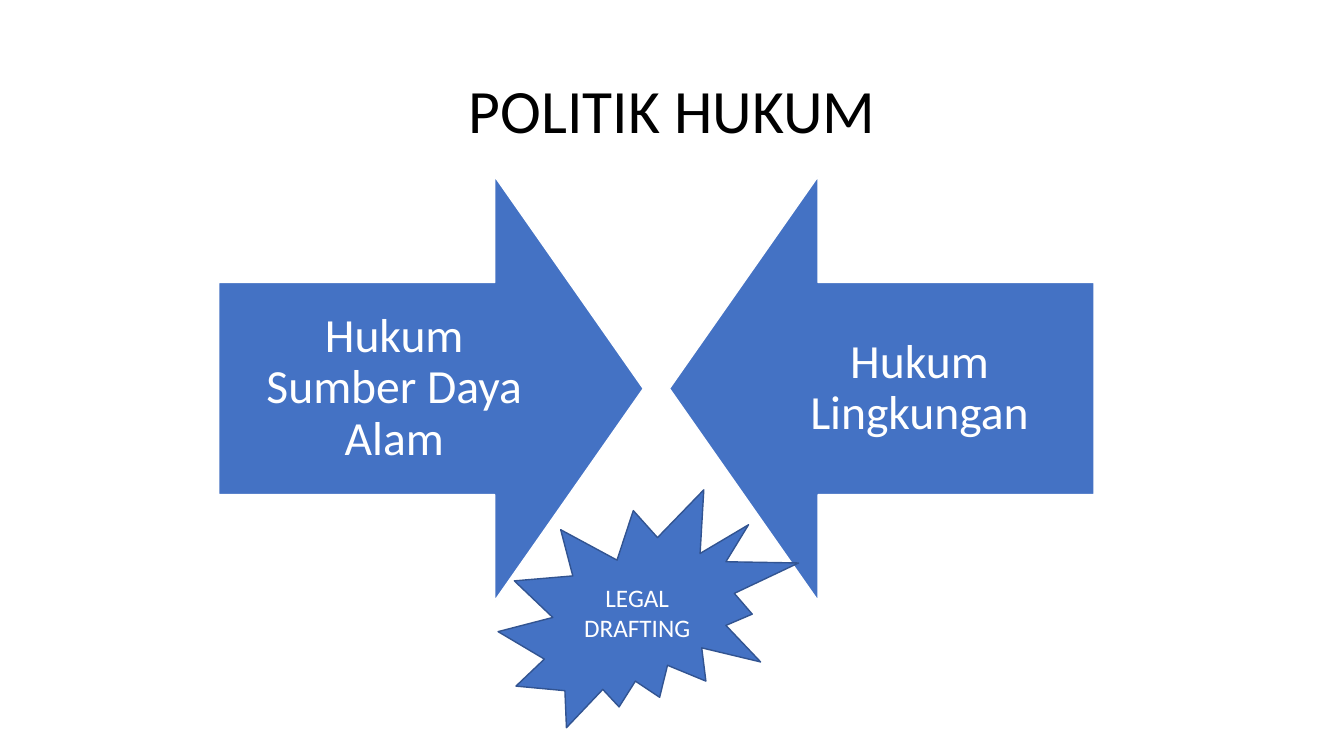
from dataclasses import dataclass

from pptx import Presentation
from pptx.dml.color import RGBColor
from pptx.enum.shapes import MSO_SHAPE
from pptx.enum.text import MSO_ANCHOR, PP_ALIGN
from pptx.util import Inches, Pt

ARROW = MSO_SHAPE.DOWN_ARROW
BURST = MSO_SHAPE.EXPLOSION2
MIDDLE = MSO_ANCHOR.MIDDLE
CENTER = PP_ALIGN.CENTER


@dataclass(frozen=True)
class Theme:
    """Colours, font and type sizes of the slide."""
    font: str = "Calibri"
    black: RGBColor = RGBColor(0x00, 0x00, 0x00)
    white: RGBColor = RGBColor(0xFF, 0xFF, 0xFF)
    blue: RGBColor = RGBColor(0x44, 0x72, 0xC4)
    outline: RGBColor = RGBColor(0x32, 0x54, 0x91)
    title: int = 44
    label: int = 34
    note: int = 18


THEME = Theme()


def write(shape, text, size, color, spacing=1.0):
    """Put centred text into a shape."""
    tf = shape.text_frame
    tf.text = text
    tf.word_wrap = True
    tf.vertical_anchor = MIDDLE
    p = tf.paragraphs[0]
    p.alignment = CENTER
    p.line_spacing = spacing
    font = p.runs[0].font
    font.name, font.size, font.color.rgb = THEME.font, Pt(size), color


def add_text(s, box, text, size, color, inset=None):
    """Add a text box with tight lines and an optional even inset."""
    tb = s.shapes.add_textbox(*map(Inches, box))
    write(tb, text, size, color, 0.9)
    if inset is not None:
        tf = tb.text_frame
        tf.margin_left = tf.margin_right = Inches(inset)
        tf.margin_top = tf.margin_bottom = Inches(inset)


def add_filled(s, kind, box, line):
    """Add a blue preset shape with a thin outline."""
    sp = s.shapes.add_shape(kind, *map(Inches, box))
    sp.shadow.inherit = False
    sp.fill.solid()
    sp.fill.fore_color.rgb = THEME.blue
    sp.line.color.rgb = line
    sp.line.width = Pt(1)
    return sp


def add_arrow(s, left, rotation, text_left, text):
    """Add a sideways block arrow with its label."""
    sp = add_filled(s, ARROW, (left, 1.75, 4.21, 4.21), THEME.white)
    sp.adjustments[0] = 0.5
    sp.adjustments[1] = 0.35
    sp.rotation = rotation
    add_text(s, (text_left, 2.8, 3.48, 2.11), text, THEME.label, THEME.white, 0.26)


def main():
    """Build the slide and save it."""
    prs = Presentation()
    prs.slide_width, prs.slide_height = Inches(13.33), Inches(7.5)
    s = prs.slides.add_slide(prs.slide_layouts[6])
    add_text(s, (0.92, 0.4, 11.5, 1.45), "POLITIK HUKUM", THEME.title, THEME.black)
    add_arrow(s, 2.17, 270, 2.17, "Hukum Sumber Daya Alam")
    add_arrow(s, 6.64, 90, 7.38, "Hukum Lingkungan")
    burst = add_filled(s, BURST, (4.94, 4.86, 2.98, 2.36), THEME.outline)
    write(burst, "LEGAL DRAFTING", THEME.note, THEME.white)
    prs.save("out.pptx")


if __name__ == "__main__":
    main()
